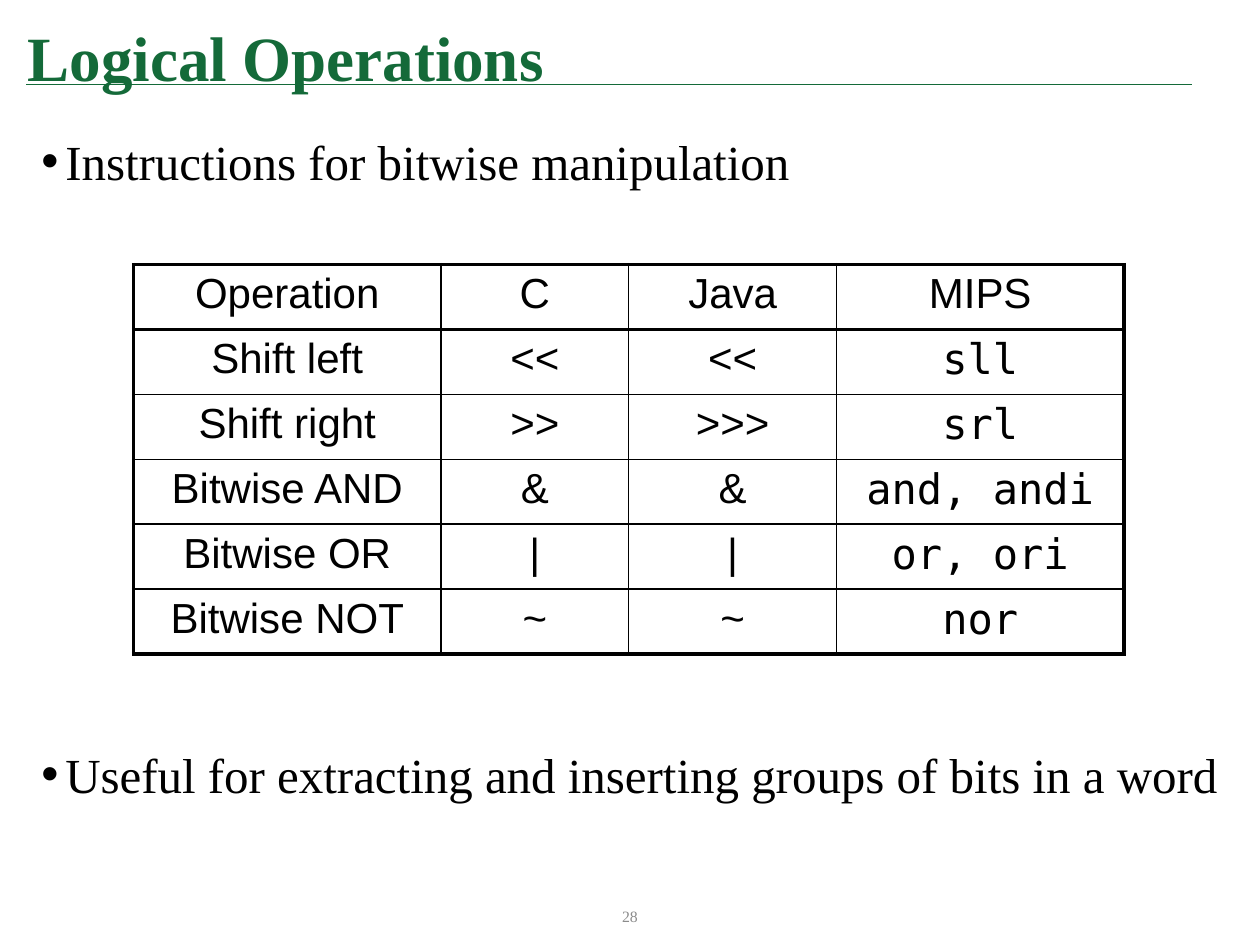
from lxml.etree import SubElement
from pptx import Presentation
from pptx.dml.color import RGBColor
from pptx.enum.shapes import MSO_CONNECTOR
from pptx.enum.text import MSO_ANCHOR, PP_ALIGN
from pptx.oxml.ns import qn
from pptx.util import Inches, Pt

GREEN = RGBColor(0x14, 0x6A, 0x39)
BLACK = RGBColor(0, 0, 0)
GRAY = RGBColor(0x8C, 0x8C, 0x8C)
SERIF, SANS, MONO = "Times New Roman", "Arial", "DejaVu Sans Mono"

OPERATIONS = [
    ("Operation", "C", "Java", "MIPS"),
    ("Shift left", "<<", "<<", "sll"),
    ("Shift right", ">>", ">>>", "srl"),
    ("Bitwise AND", "&", "&", "and, andi"),
    ("Bitwise OR", "|", "|", "or, ori"),
    ("Bitwise NOT", "~", "~", "nor"),
]
COLUMN_WIDTHS = (2.44, 1.49, 1.65, 2.28)
ROW_HEIGHT = 0.515
OUTER, HEADER, INNER = 2.25, 1.5, 1  # border widths in points


def set_font(paragraph, name, size, color, bold=False):
    font = paragraph.font
    font.name, font.size, font.bold = name, Pt(size), bold
    font.color.rgb = color


def add_title(page, text):
    title = page.shapes.title
    title.left, title.top = Inches(0.12), Inches(0.07)
    title.width, title.height = Inches(9.19), Inches(0.73)
    title.text_frame.text = text
    title.text_frame.vertical_anchor = MSO_ANCHOR.BOTTOM
    paragraph = title.text_frame.paragraphs[0]
    paragraph.alignment = PP_ALIGN.LEFT
    set_font(paragraph, SERIF, 36, GREEN, bold=True)


def add_rule(page):
    rule = page.shapes.add_connector(
        MSO_CONNECTOR.STRAIGHT, Inches(0.21), Inches(0.67), Inches(9.46), Inches(0.67))
    rule.line.color.rgb = GREEN
    rule.line.width = Pt(1)
    SubElement(rule._element.spPr, qn("a:effectLst"))


def add_text_box(page, left, top, width, height):
    box = page.shapes.add_textbox(Inches(left), Inches(top), Inches(width), Inches(height))
    box.text_frame.word_wrap = True
    return box.text_frame


def add_bullets(page, items, gap):
    frame = add_text_box(page, 0.23, 0.76, 9.56, 6.06)
    for index, text in enumerate(items):
        paragraph = frame.add_paragraph() if index else frame.paragraphs[0]
        paragraph.text = text
        paragraph.line_spacing = 1.5
        if index:
            paragraph.space_before = Pt(gap)
        properties = paragraph._p.get_or_add_pPr()
        properties.set("marL", str(Inches(0.19)))
        properties.set("indent", str(-Inches(0.19)))
        SubElement(properties, qn("a:buFont"), typeface=SANS)
        SubElement(properties, qn("a:buChar"), char="•")
        set_font(paragraph, SERIF, 28, BLACK)


def set_borders(cell, widths):
    properties = cell._tc.get_or_add_tcPr()
    for side, width in zip("LRTB", widths):
        line = SubElement(properties, qn(f"a:ln{side}"), w=str(Pt(width)))
        fill = SubElement(line, qn("a:solidFill"))
        SubElement(fill, qn("a:srgbClr"), val=str(BLACK))


def add_operations_table(page):
    last_row, last_column = len(OPERATIONS) - 1, len(COLUMN_WIDTHS) - 1
    table = page.shapes.add_table(
        len(OPERATIONS), len(COLUMN_WIDTHS), Inches(1.06), Inches(2.1),
        Inches(sum(COLUMN_WIDTHS)), Inches(ROW_HEIGHT * len(OPERATIONS))).table
    table.first_row = table.horz_banding = False
    for column, width in zip(table.columns, COLUMN_WIDTHS):
        column.width = Inches(width)

    # Horizontal lines from top to bottom: frame, header rule, inner, frame
    levels = [OUTER, HEADER] + [INNER] * (last_row - 1) + [OUTER]
    for row, values in enumerate(OPERATIONS):
        table.rows[row].height = Inches(ROW_HEIGHT)
        for column, text in enumerate(values):
            cell = table.cell(row, column)
            cell.text = text
            set_borders(cell, (
                OUTER if column == 0 else INNER,
                OUTER if column == last_column else INNER,
                levels[row], levels[row + 1]))
            cell.fill.background()
            paragraph = cell.text_frame.paragraphs[0]
            paragraph.alignment = PP_ALIGN.CENTER
            is_code = row > 0 and column == last_column
            set_font(paragraph, MONO if is_code else SANS, 24, BLACK)


def add_page_number(page, number):
    frame = add_text_box(page, 3.73, 7.07, 2.54, 0.4)
    frame.text = number
    frame.vertical_anchor = MSO_ANCHOR.MIDDLE
    paragraph = frame.paragraphs[0]
    paragraph.alignment = PP_ALIGN.CENTER
    set_font(paragraph, SERIF, 9, GRAY)


def main():
    deck = Presentation()
    deck.slide_width, deck.slide_height = Inches(10), Inches(7.5)
    page = deck.slides.add_slide(deck.slide_layouts[5])

    # Heading
    add_rule(page)
    add_title(page, "Logical Operations")

    # Bullets above and below the table
    add_bullets(page, ["Instructions for bitwise manipulation",
                       "Useful for extracting and inserting groups of bits in a word"], gap=300)
    add_operations_table(page)

    # Footer
    add_page_number(page, "28")
    deck.save("out.pptx")


if __name__ == "__main__":
    main()
